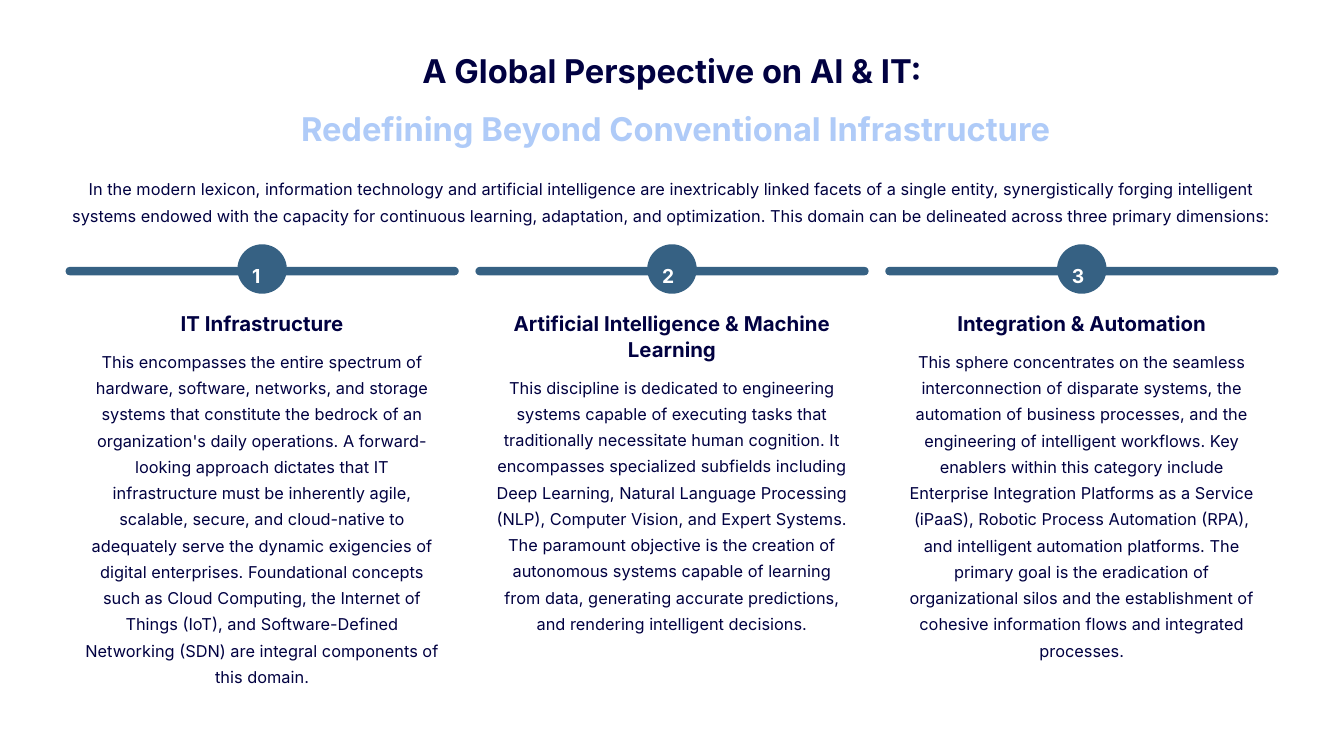
"""Build a slide on three dimensions of AI and IT."""
from pptx import Presentation
from pptx.dml.color import RGBColor
from pptx.enum.shapes import MSO_SHAPE
from pptx.enum.text import MSO_ANCHOR, MSO_AUTO_SIZE, PP_ALIGN
from pptx.util import Pt

COLORS = {"navy": "010141", "sky": "AFCBF8", "steel": "366183", "white": "FFFFFF"}
COLUMN_LEFT, COLUMN_WIDTH, COLUMN_STEP = 56.2, 337, 351.3
TEXT_INSET = 15.8
CIRCLE_SIZE = 42.4
HEADING_TOP, HEADING_LEADING = 265.7, 22

DIMENSIONS = [
    ("IT Infrastructure", 1,
     "This encompasses the entire spectrum of hardware, software, networks, and storage "
     "systems that constitute the bedrock of an organization's daily operations. A "
     "forward-looking approach dictates that IT infrastructure must be inherently agile, "
     "scalable, secure, and cloud-native to adequately serve the dynamic exigencies of "
     "digital enterprises. Foundational concepts such as Cloud Computing, the Internet of "
     "Things (IoT), and Software-Defined Networking (SDN) are integral components of this "
     "domain."),
    ("Artificial Intelligence & Machine Learning", 2,
     "This discipline is dedicated to engineering systems capable of executing tasks that "
     "traditionally necessitate human cognition. It encompasses specialized subfields "
     "including Deep Learning, Natural Language Processing (NLP), Computer Vision, and "
     "Expert Systems. The paramount objective is the creation of autonomous systems capable "
     "of learning from data, generating accurate predictions, and rendering intelligent "
     "decisions."),
    ("Integration & Automation", 1,
     "This sphere concentrates on the seamless interconnection of disparate systems, the "
     "automation of business processes, and the engineering of intelligent workflows. Key "
     "enablers within this category include Enterprise Integration Platforms as a Service "
     "(iPaaS), Robotic Process Automation (RPA), and intelligent automation platforms. The "
     "primary goal is the eradication of organizational silos and the establishment of "
     "cohesive information flows and integrated processes."),
]


def write(shape, box, text, size, leading, color="navy", bold=False, align=PP_ALIGN.CENTER):
    shape.left, shape.top, shape.width, shape.height = (Pt(length) for length in box)
    frame = shape.text_frame
    frame.margin_left = frame.margin_top = frame.margin_right = frame.margin_bottom = 0
    frame.word_wrap = True
    frame.auto_size = MSO_AUTO_SIZE.NONE
    frame.vertical_anchor = MSO_ANCHOR.TOP
    frame.text = text
    paragraph = frame.paragraphs[0]
    paragraph.alignment = align
    paragraph.line_spacing = Pt(leading)
    paragraph.space_before = Pt(0)
    paragraph.font.name = "Inter"
    paragraph.font.size = Pt(size)
    paragraph.font.bold = bold
    paragraph.font.color.rgb = RGBColor.from_string(COLORS[color])


def add_text(*arguments, **options):
    write(slide.shapes.add_textbox(0, 0, 0, 0), *arguments, **options)


presentation = Presentation()
presentation.slide_width, presentation.slide_height = Pt(1152), Pt(648)
slide = presentation.slides.add_slide(presentation.slide_layouts[0])
slide.background.fill.solid()
slide.background.fill.fore_color.rgb = RGBColor.from_string(COLORS["white"])

write(slide.shapes.title, (326, 42.5, 500, 35.3),
      "A Global Perspective on AI & IT:", 28, 35, bold=True)
write(slide.placeholders[1], (229, 92.2, 700, 35.3),
      "Redefining Beyond Conventional Infrastructure", 28, 35, color="sky", bold=True)
add_text((COLUMN_LEFT, 148.3, 1039, 45.4),
         "In the modern lexicon, information technology and artificial intelligence are "
         "inextricably linked facets of a single entity, synergistically forging intelligent "
         "systems endowed with the capacity for continuous learning, adaptation, and "
         "optimization. This domain can be delineated across three primary dimensions:",
         14, 22.5)

for index, (heading, heading_lines, description) in enumerate(DIMENSIONS):
    left = COLUMN_LEFT + index * COLUMN_STEP
    circle_left = left + (COLUMN_WIDTH - CIRCLE_SIZE) / 2
    bar_box = (left, 228.8, COLUMN_WIDTH, 7.2)
    circle_box = (circle_left, 209.4, CIRCLE_SIZE, CIRCLE_SIZE)
    for box in (bar_box, circle_box):
        shape = slide.shapes.add_shape(MSO_SHAPE.ROUNDED_RECTANGLE, *(Pt(length) for length in box))
        shape.adjustments[0] = 0.5
        shape.shadow.inherit = False
        shape.fill.solid()
        shape.fill.fore_color.rgb = RGBColor.from_string(COLORS["steel"])
        shape.line.fill.background()

    add_text((circle_left + 12.7, 219.6, 16.6, 20.9), str(index + 1), 16.5, 27,
             color="white", bold=True, align=PP_ALIGN.LEFT)

    text_left = left + TEXT_INSET
    text_width = COLUMN_WIDTH - 2 * TEXT_INSET
    heading_height = heading_lines * HEADING_LEADING
    description_top = HEADING_TOP + heading_height + 8.4
    add_text((text_left, HEADING_TOP, text_width, heading_height), heading,
             17.5, HEADING_LEADING, bold=True)
    add_text((text_left, description_top, text_width, 293), description, 14, 22.5)

presentation.save("out.pptx")
